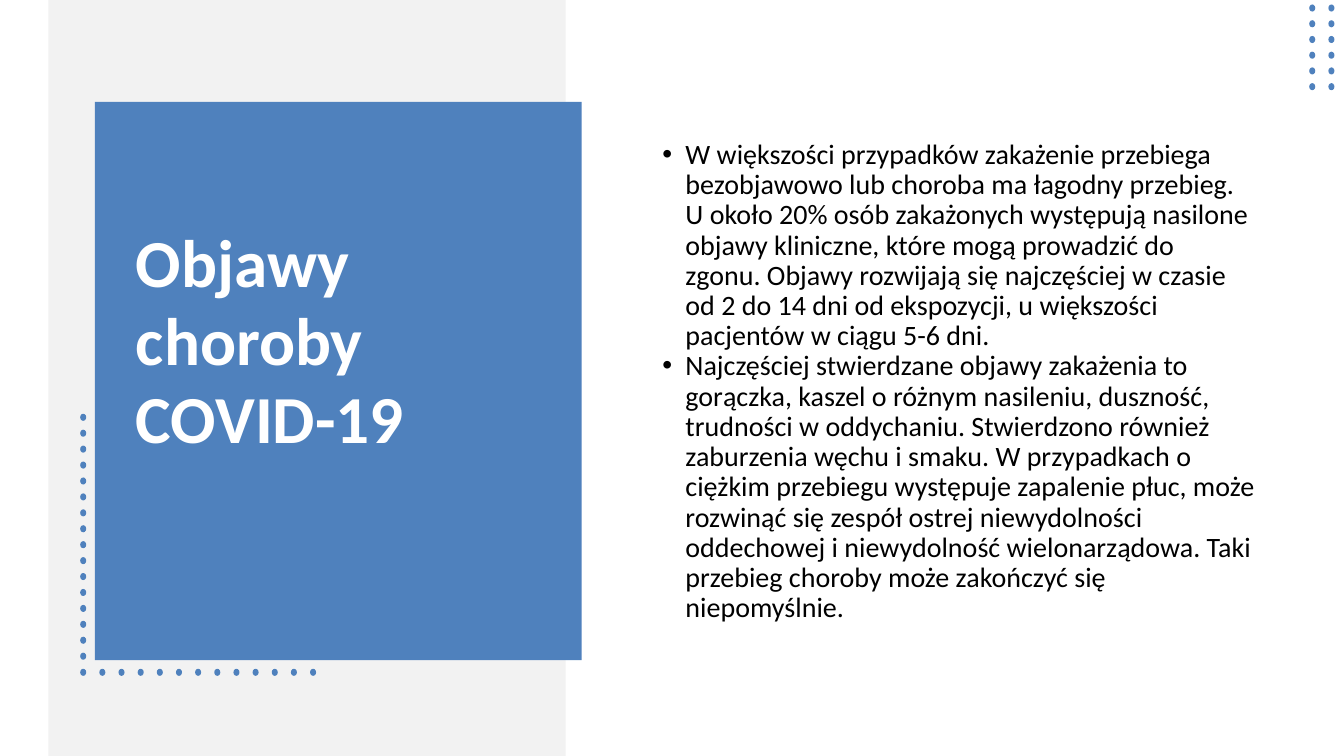
"""Build the slide on COVID-19 symptoms: title panel, dotted trim and two bullets."""
from dataclasses import dataclass

from lxml.etree import SubElement
from pptx import Presentation
from pptx.dml.color import RGBColor
from pptx.enum.shapes import MSO_SHAPE as Preset
from pptx.enum.text import MSO_ANCHOR as Anchor
from pptx.oxml.ns import qn
from pptx.util import Inches, Pt

GREY = RGBColor(0xF2, 0xF2, 0xF2)
BLUE = RGBColor(0x4F, 0x81, 0xBD)
WHITE = RGBColor(0xFF, 0xFF, 0xFF)
BLACK = RGBColor(0x00, 0x00, 0x00)

TITLE = "Objawy choroby COVID-19"
SYMPTOMS = [
    "W większości przypadków zakażenie przebiega bezobjawowo lub choroba ma łagodny "
    "przebieg. U około 20% osób zakażonych występują nasilone objawy kliniczne, które "
    "mogą prowadzić do zgonu. Objawy rozwijają się najczęściej w czasie od 2 do 14 dni "
    "od ekspozycji, u większości pacjentów w ciągu 5-6 dni.",
    "Najczęściej stwierdzane objawy zakażenia to gorączka, kaszel o różnym nasileniu, "
    "duszność, trudności w oddychaniu. Stwierdzono również zaburzenia węchu i smaku. "
    "W przypadkach o ciężkim przebiegu występuje zapalenie płuc, może rozwinąć się "
    "zespół ostrej niewydolności oddechowej i niewydolność wielonarządowa. Taki "
    "przebieg choroby może zakończyć się niepomyślnie.",
]


@dataclass(frozen=True)
class Box:
    left: float
    top: float
    width: float
    height: float

    def lengths(self) -> list[int]:
        return [Inches(n) for n in (self.left, self.top, self.width, self.height)]


@dataclass(frozen=True)
class DotGrid:
    left: float
    top: float
    columns: int
    rows: int
    column_step: float = 0.19
    row_step: float = 0.158


@dataclass(frozen=True)
class TextBlock:
    box: Box
    paragraphs: list[str]
    font: dict
    line_spacing: float
    bottom_inset: float
    bulleted: bool = False


PANELS = [(Box(0.48, 0, 5.13, 7.5), GREY), (Box(0.94, 1.01, 4.83, 5.54), BLUE)]
DOT_GRIDS = [
    DotGrid(0.79, 4.11, columns=1, rows=16),
    DotGrid(0.79, 6.64, columns=13, rows=1),
    DotGrid(12.98, 0.05, columns=2, rows=6, row_step=0.156),
]
TEXT_BLOCKS = [
    TextBlock(Box(1.25, 1.45, 4.14, 4.68), [TITLE],
              {"size": Pt(48), "bold": True, "color": WHITE}, 0.97, 0.84),
    TextBlock(Box(6.47, 1.3, 6.08, 5.25), SYMPTOMS,
              {"size": Pt(20), "bold": False, "color": BLACK}, 0.9, 0.32, True),
]


def draw_shape(slide, preset: Preset, box: Box, color: RGBColor, rotation: int = 0) -> None:
    shape = slide.shapes.add_shape(preset, *box.lengths())
    shape.rotation = rotation
    shape.shadow.inherit = False
    shape.fill.solid()
    shape.fill.fore_color.rgb = color
    shape.line.fill.background()


def draw_dots(slide, grid: DotGrid) -> None:
    for row in range(grid.rows):
        for column in range(grid.columns):
            dot = Box(grid.left + column * grid.column_step,
                      grid.top + row * grid.row_step, 0.07, 0.06)
            draw_shape(slide, Preset.OVAL, dot, BLUE, 90)


def add_bullet(paragraph) -> None:
    properties = paragraph._p.get_or_add_pPr()
    properties.set("marL", str(Inches(0.23)))
    properties.set("indent", str(-Inches(0.23)))
    SubElement(properties, qn("a:buFont")).set("typeface", "Arial")
    SubElement(properties, qn("a:buChar")).set("char", "•")


def draw_text(slide, block: TextBlock) -> None:
    frame = slide.shapes.add_textbox(*block.box.lengths()).text_frame
    frame.word_wrap = True
    frame.vertical_anchor = Anchor.MIDDLE
    frame.margin_bottom = Inches(block.bottom_inset)
    for index, wording in enumerate(block.paragraphs):
        paragraph = frame.add_paragraph() if index else frame.paragraphs[0]
        paragraph.line_spacing = block.line_spacing
        if block.bulleted:
            add_bullet(paragraph)
        run = paragraph.add_run()
        run.text = wording
        run.font.name = "Calibri"
        for attribute, value in block.font.items():
            if attribute == "color":
                run.font.color.rgb = value
            else:
                setattr(run.font, attribute, value)


def main() -> None:
    deck = Presentation()
    deck.slide_width, deck.slide_height = Inches(13.33), Inches(7.5)
    slide = deck.slides.add_slide(deck.slide_layouts[6])
    for box, color in PANELS:
        draw_shape(slide, Preset.RECTANGLE, box, color)
    for grid in DOT_GRIDS:
        draw_dots(slide, grid)
    for block in TEXT_BLOCKS:
        draw_text(slide, block)
    deck.save("out.pptx")


if __name__ == "__main__":
    main()
